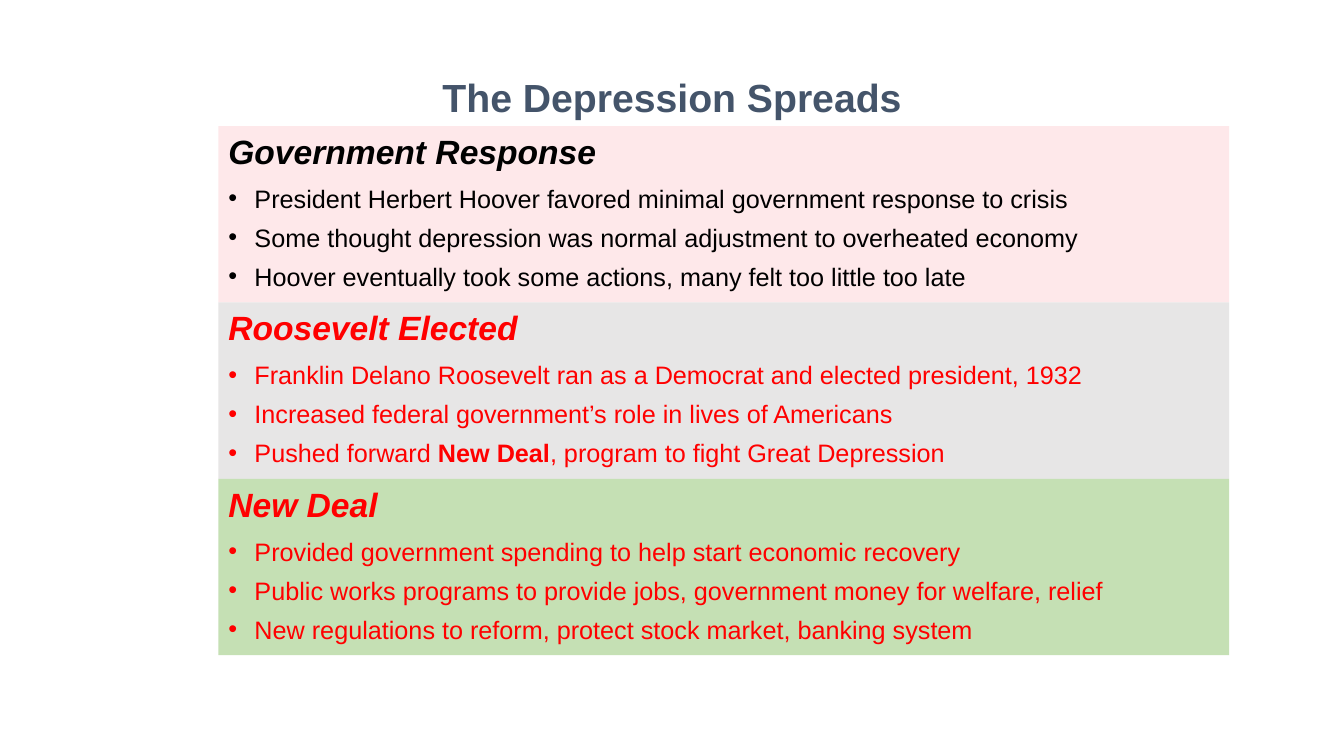
from lxml import etree
from pptx import Presentation
from pptx.dml.color import RGBColor
from pptx.enum.shapes import MSO_SHAPE as SHAPE
from pptx.enum.text import MSO_ANCHOR as ANCHOR, MSO_AUTO_SIZE as AUTO, PP_ALIGN as ALIGN
from pptx.oxml.ns import qn
from pptx.util import Pt

# Each panel: fill, text colour, heading, bullets (** marks bold)
PANELS = [
    ("FEE8EA", "000000", "Government Response", [
        "President Herbert Hoover favored minimal government response to crisis",
        "Some thought depression was normal adjustment to overheated economy",
        "Hoover eventually took some actions, many felt too little too late"]),
    ("E7E6E6", "FF0000", "Roosevelt Elected", [
        "Franklin Delano Roosevelt ran as a Democrat and elected president, 1932",
        "Increased federal government’s role in lives of Americans",
        "Pushed forward **New Deal**, program to fight Great Depression"]),
    ("C5E0B4", "FF0000", "New Deal", [
        "Provided government spending to help start economic recovery",
        "Public works programs to provide jobs, government money for welfare, relief",
        "New regulations to reform, protect stock market, banking system"]),
]
PANEL_HEIGHT = 126
HANGING = 18.7


def rgb(value):
    return RGBColor.from_string(value)


def style(font, size, color, bold=False, italic=False):
    font.name, font.size = "Arial", Pt(size)
    font.bold, font.italic = bold, italic
    font.color.rgb = rgb(color)


def add_title(slide, text, x, y, w, h):
    sp = slide.shapes.title
    sp.left, sp.top, sp.width, sp.height = Pt(x), Pt(y), Pt(w), Pt(h)
    tf = sp.text_frame
    tf.text = text
    tf.auto_size = AUTO.NONE
    tf.vertical_anchor = ANCHOR.MIDDLE
    p = tf.paragraphs[0]
    p.alignment = ALIGN.CENTER
    style(p.runs[0].font, 28, "44546A", bold=True)


def format_paragraph(p, size, bullet=False):
    p.alignment = ALIGN.LEFT
    p.space_after = Pt(0.35 * size)
    pPr = p._p.get_or_add_pPr()
    pPr.set("marL", str(Pt(HANGING)))
    pPr.set("indent", str(-Pt(HANGING)))
    if bullet:
        etree.SubElement(pPr, qn("a:buFont")).set("typeface", "Arial")
        etree.SubElement(pPr, qn("a:buChar")).set("char", "•")


def add_panel(slide, panel, x, y, w, h):
    fill, color, heading, bullets = panel
    sp = slide.shapes.add_shape(SHAPE.RECTANGLE, Pt(x), Pt(y), Pt(w), Pt(h))
    sp.shadow.inherit = False
    sp.fill.solid()
    sp.fill.fore_color.rgb = rgb(fill)
    sp.line.fill.background()
    tf = sp.text_frame
    tf.word_wrap = True
    tf.vertical_anchor = ANCHOR.TOP

    # Heading
    tf.text = heading
    p = tf.paragraphs[0]
    format_paragraph(p, 24)
    style(p.runs[0].font, 24, color, bold=True, italic=True)

    # Bullets
    for bullet in bullets:
        p = tf.add_paragraph()
        format_paragraph(p, 18, bullet=True)
        for i, part in enumerate(bullet.split("**")):
            r = p.add_run()
            r.text = part
            style(r.font, 18, color, bold=i % 2 == 1)


def main():
    prs = Presentation()
    prs.slide_width, prs.slide_height = Pt(960), Pt(540)
    slide = prs.slides.add_slide(prs.slide_layouts[5])
    add_title(slide, "The Depression Spreads", 168, 48, 624, 42)
    for i, panel in enumerate(PANELS):
        add_panel(slide, panel, 156, 90 + i * PANEL_HEIGHT, 722, PANEL_HEIGHT)
    prs.save("out.pptx")


if __name__ == "__main__":
    main()
